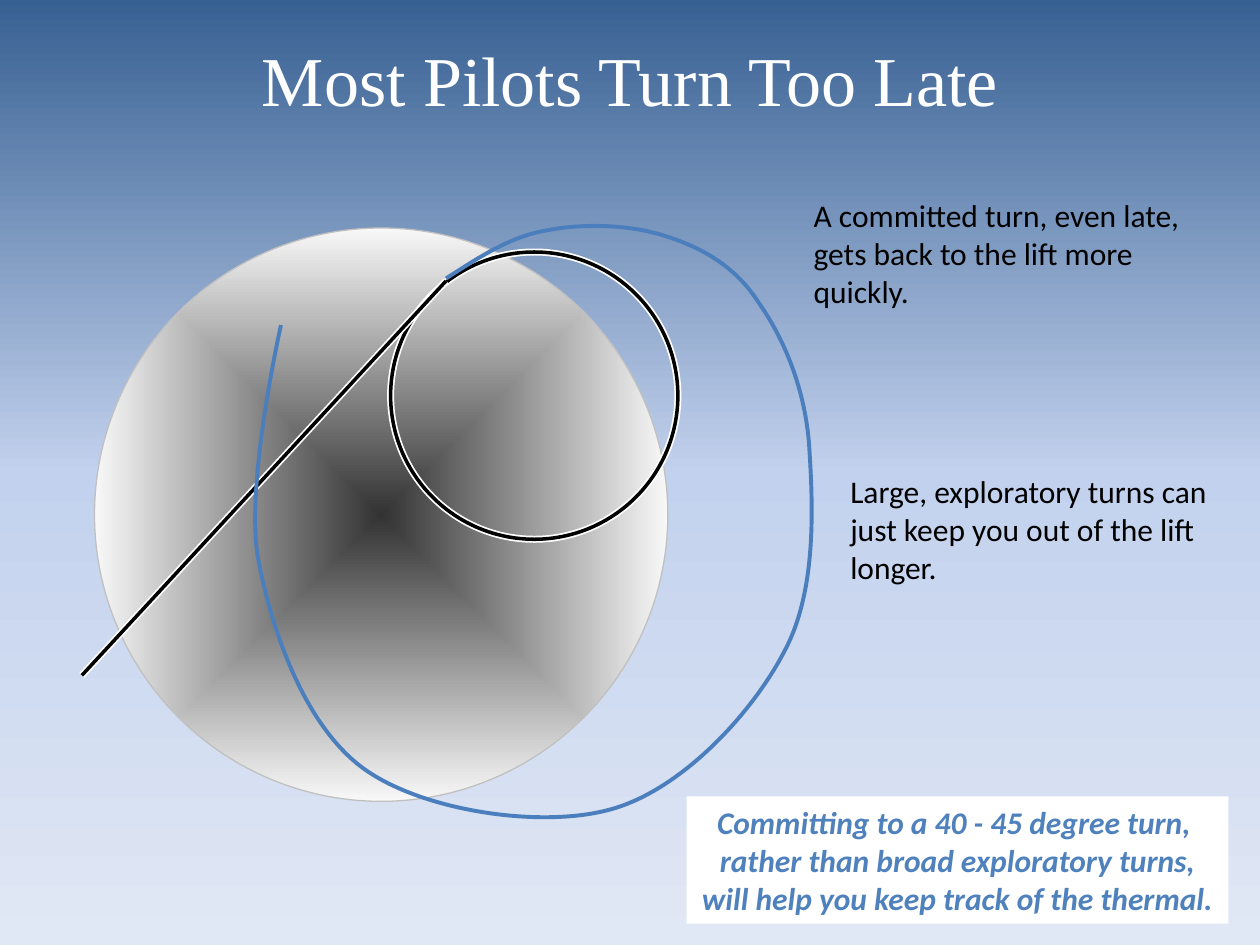
from dataclasses import dataclass

from lxml import etree
from pptx import Presentation
from pptx.dml.color import RGBColor
from pptx.enum.shapes import MSO_CONNECTOR, MSO_SHAPE
from pptx.enum.text import MSO_ANCHOR, MSO_AUTO_SIZE, PP_ALIGN
from pptx.oxml import parse_xml
from pptx.oxml.ns import nsdecls, qn
from pptx.util import Inches, Pt

OVAL, RECTANGLE = MSO_SHAPE.OVAL, MSO_SHAPE.RECTANGLE
STRAIGHT = MSO_CONNECTOR.STRAIGHT
CENTER, MIDDLE = PP_ALIGN.CENTER, MSO_ANCHOR.MIDDLE
GROW = MSO_AUTO_SIZE.SHAPE_TO_FIT_TEXT

WHITE = RGBColor(0xFF, 0xFF, 0xFF)
BLACK = RGBColor(0x00, 0x00, 0x00)
SILVER = RGBColor(0xC0, 0xC0, 0xC0)
CORE_GRAY = RGBColor(0x33, 0x33, 0x33)
EDGE_GRAY = RGBColor(0xF8, 0xF8, 0xF8)
PATH_BLUE = RGBColor(0x4B, 0x7E, 0xBC)
TEXT_BLUE = RGBColor(0x4F, 0x81, 0xBD)
SKY = [(0, RGBColor(0x37, 0x60, 0x92)), (50, RGBColor(0xC2, 0xD1, 0xED)),
       (100, RGBColor(0xE1, 0xE8, 0xF5))]
THERMAL = [(0, CORE_GRAY), (100, EDGE_GRAY)]

DOWNWARD = '<a:lin ang="5400000" scaled="0"/>'
FROM_CENTER = ('<a:path path="shape"><a:fillToRect l="50000" t="50000" '
               'r="50000" b="50000"/></a:path>')

# White halo below, black stroke on top
TRACK_STROKES = [(WHITE, 4), (BLACK, 2)]
TRACK_START, TRACK_END = (3.54, 2.23), (0.65, 5.36)

# Wide search turn: start point, then cubic Bézier segments
SEARCH_START = (3.54, 2.21)
SEARCH_CURVES = [
    ((3.79, 2.05), (4.04, 1.88), (4.33, 1.83)),
    ((4.63, 1.77), (5.01, 1.78), (5.30, 1.88)),
    ((5.58, 1.97), (5.84, 2.12), (6.02, 2.40)),
    ((6.21, 2.67), (6.38, 3.05), (6.42, 3.51)),
    ((6.45, 3.97), (6.49, 4.67), (6.23, 5.16)),
    ((5.98, 5.65), (5.42, 6.26), (4.86, 6.42)),
    ((4.31, 6.58), (3.37, 6.44), (2.90, 6.11)),
    ((2.43, 5.78), (2.16, 5.03), (2.05, 4.44)),
    ((1.94, 3.86), (2.23, 2.58), (2.23, 2.58)),
]


@dataclass
class Note:
    left: float
    top: float
    width: float
    paragraphs: list[str]
    highlighted: bool = False


NOTES = [
    Note(6.36, 1.51, 3.33,
         ["A committed turn, even late, gets back to the lift more quickly."]),
    Note(6.65, 3.7, 3.33,
         ["Large, exploratory turns can just keep you out of the lift longer."]),
    Note(5.45, 6.32, 4.3,
         ["Committing to a 40 - 45 degree turn, ",
          "rather than broad exploratory turns, will help you keep track of the thermal."],
         highlighted=True),
]
NOTE_HEIGHT = 1.01


def set_gradient(fill, owner, stops: list, direction: str) -> None:
    """Give the fill of the owner element custom stops and direction."""
    fill.gradient()
    old = owner.find(".//" + qn("a:gradFill"))
    stop_xml = "".join(f'<a:gs pos="{position * 1000}"><a:srgbClr val="{color}"/></a:gs>'
                       for position, color in stops)
    old.getparent().replace(old, parse_xml(
        f'<a:gradFill {nsdecls("a")} rotWithShape="1"><a:gsLst>{stop_xml}</a:gsLst>'
        f'{direction}</a:gradFill>'))


def set_line(shape, color: RGBColor, width: float) -> None:
    shape.line.color.rgb = color
    shape.line.width = Pt(width)


def add_circle(shapes, left: float, top: float, size: float, color: RGBColor, width: float):
    circle = shapes.add_shape(OVAL, Inches(left), Inches(top), Inches(size), Inches(size))
    circle.shadow.inherit = False
    circle.fill.background()
    set_line(circle, color, width)
    return circle


def add_track(shapes, color: RGBColor, width: float) -> None:
    start, end = [[Inches(value) for value in point] for point in (TRACK_START, TRACK_END)]
    track = shapes.add_connector(STRAIGHT, *start, *end)
    set_line(track, color, width)
    etree.SubElement(track.element.spPr, qn("a:effectLst"))


def add_search_turn(shapes) -> None:
    start_x, start_y = SEARCH_START
    builder = shapes.build_freeform(Inches(start_x), Inches(start_y))
    builder.add_line_segments([(Inches(x), Inches(y)) for curve in SEARCH_CURVES
                               for x, y in curve], close=False)
    turn = builder.convert_to_shape()
    # Join each three straight segments into one Bézier curve
    segments = turn.element.findall(".//" + qn("a:lnTo"))
    for first in range(0, len(segments), 3):
        curve = etree.Element(qn("a:cubicBezTo"))
        segments[first].addprevious(curve)
        for segment in segments[first:first + 3]:
            curve.append(segment[0])
            segment.getparent().remove(segment)
    turn.shadow.inherit = False
    turn.fill.background()
    set_line(turn, PATH_BLUE, 2.25)


def add_note(shapes, note: Note) -> None:
    box = [Inches(value) for value in (note.left, note.top, note.width, NOTE_HEIGHT)]
    if note.highlighted:
        shape = shapes.add_shape(RECTANGLE, *box)
        shape.shadow.inherit = False
        shape.fill.solid()
        shape.fill.fore_color.rgb = WHITE
        shape.line.fill.background()
    else:
        shape = shapes.add_textbox(*box)
    frame = shape.text_frame
    frame.word_wrap = True
    frame.auto_size = GROW
    frame.text = "\n".join(note.paragraphs)
    for paragraph in frame.paragraphs:
        font = paragraph.font
        font.name, font.size = "Calibri", Pt(18)
        font.color.rgb = TEXT_BLUE if note.highlighted else BLACK
        if note.highlighted:
            paragraph.alignment = CENTER
            font.bold = font.italic = True


def main() -> None:
    presentation = Presentation()
    presentation.slide_width, presentation.slide_height = Inches(10), Inches(7.5)
    slide = presentation.slides.add_slide(presentation.slide_layouts[5])
    set_gradient(slide.background.fill, slide.element, SKY, DOWNWARD)

    # Title
    title = slide.shapes.title
    title.left, title.top, title.width, title.height = (
        Inches(0.5), Inches(0), Inches(9), Inches(1.25))
    title.text_frame.text = "Most Pilots Turn Too Late"
    title.text_frame.vertical_anchor = MIDDLE
    paragraph = title.text_frame.paragraphs[0]
    paragraph.alignment = CENTER
    paragraph.font.name, paragraph.font.size = "Times New Roman", Pt(40)
    paragraph.font.color.rgb = WHITE

    # Thermal with the committed turn and the straight entry track
    group = slide.shapes.add_group_shape()
    thermal = add_circle(group.shapes, 0.75, 1.81, 4.55, SILVER, 0.75)
    set_gradient(thermal.fill, thermal.element, THERMAL, FROM_CENTER)
    for color, width in TRACK_STROKES:
        add_circle(group.shapes, 3.1, 2, 2.28, color, width)
    for color, width in TRACK_STROKES:
        add_track(group.shapes, color, width)

    # Wide search turn and notes
    add_search_turn(slide.shapes)
    for note in NOTES:
        add_note(slide.shapes, note)

    presentation.save("out.pptx")


if __name__ == "__main__":
    main()
